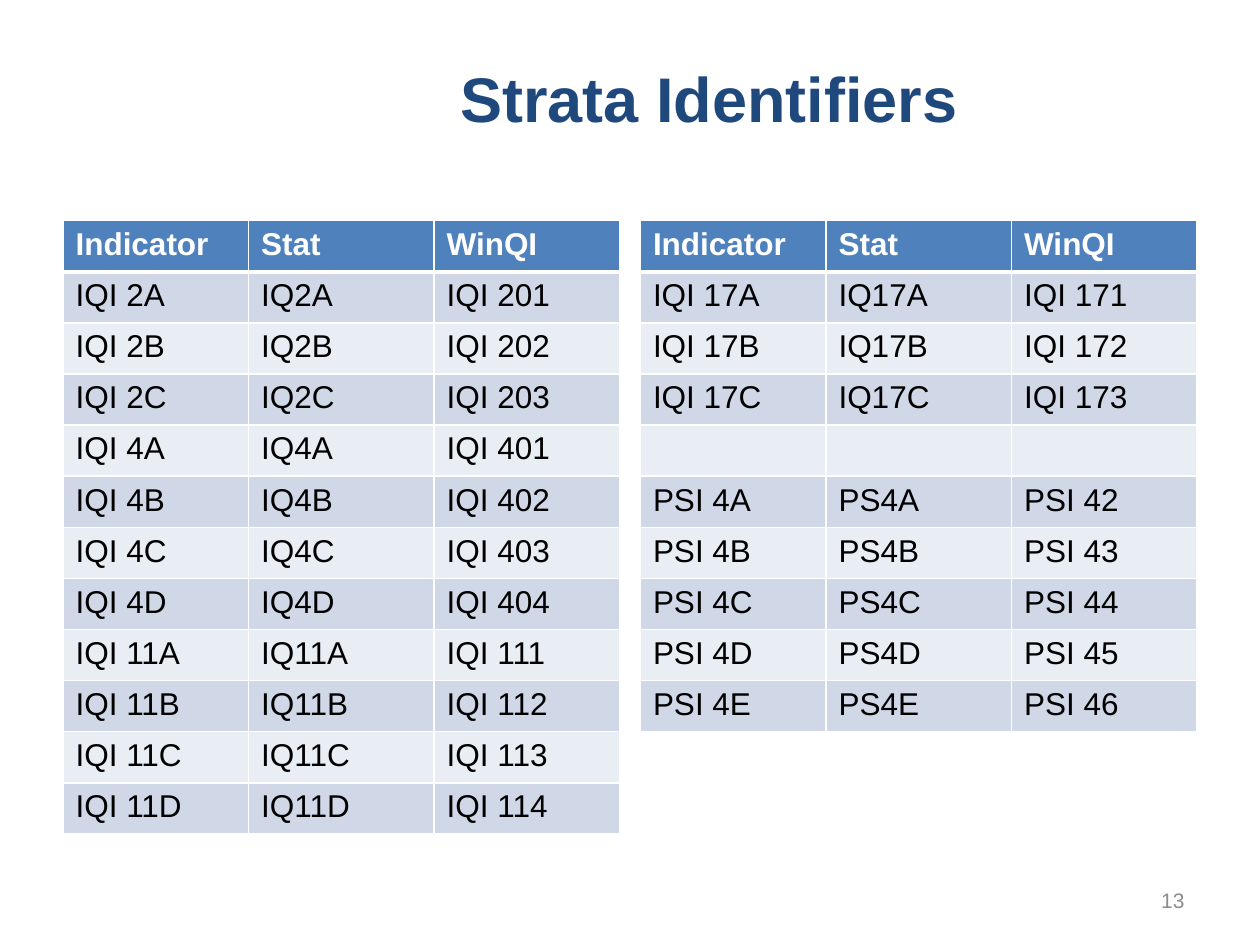
from lxml.etree import SubElement
from pptx import Presentation
from pptx.dml.color import RGBColor
from pptx.enum.text import MSO_ANCHOR as Anchor, PP_ALIGN as Align
from pptx.oxml.ns import qn
from pptx.util import Cm, Pt

NAVY = RGBColor(0x1F, 0x49, 0x7D)
BLUE = RGBColor(0x4F, 0x81, 0xBD)
BAND_DARK = RGBColor(0xD0, 0xD8, 0xE8)
BAND_LIGHT = RGBColor(0xE9, 0xED, 0xF4)
WHITE = RGBColor(0xFF, 0xFF, 0xFF)
BLACK = RGBColor(0x00, 0x00, 0x00)
GRAY = RGBColor(0x8C, 0x8C, 0x8C)


def write(frame, text, size=18, color=BLACK, bold=False, align=Align.LEFT):
    para = frame.paragraphs[0]
    para.alignment = align
    span = para.add_run()
    span.text = text
    span.font.name = "Arial"
    span.font.size = Pt(size)
    span.font.bold = bold
    span.font.color.rgb = color


def set_border(cell, side, width):
    line = SubElement(cell._tc.get_or_add_tcPr(), qn(f"a:{side}"), w=str(Pt(width)))
    fill = SubElement(line, qn("a:solidFill"))
    SubElement(fill, qn("a:srgbClr"), val=str(WHITE))


deck = Presentation()
deck.slide_width = Cm(25.4)
deck.slide_height = Cm(19.05)
page = deck.slides.add_slide(deck.slide_layouts[6])

labels = [
    ("Strata Identifiers", (4.45, 0.76, 19.69, 2.41),
     dict(size=36, color=NAVY, bold=True, align=Align.CENTER)),
    ("13", (18.2, 17.65, 5.93, 1.01),
     dict(size=12, color=GRAY, align=Align.RIGHT)),
]
for text, place, style in labels:
    box = page.shapes.add_textbox(*map(Cm, place))
    box.text_frame.word_wrap = True
    box.text_frame.vertical_anchor = Anchor.MIDDLE
    write(box.text_frame, text, **style)

HEADINGS = ("Indicator", "Stat", "WinQI")
COLUMN_WIDTH = 3.74
ROW_HEIGHT = 1.03
TABLE_TOP = 4.45
tables = [
    (1.27, [("IQI", 2, "ABC", 201), ("IQI", 4, "ABCD", 401), ("IQI", 11, "ABCD", 111)]),
    (12.91, [("IQI", 17, "ABC", 171), None, ("PSI", 4, "ABCDE", 42)]),
]

for left, groups in tables:
    rows = [HEADINGS]
    for group in groups:
        if group is None:
            rows.append(("", "", ""))
            continue
        family, number, letters, first_code = group
        for code, letter in enumerate(letters, first_code):
            rows.append((f"{family} {number}{letter}",
                         f"{family[:2]}{number}{letter}",
                         f"{family} {code}"))

    table = page.shapes.add_table(
        len(rows), len(HEADINGS), Cm(left), Cm(TABLE_TOP),
        Cm(COLUMN_WIDTH * len(HEADINGS)), Cm(ROW_HEIGHT * len(rows))).table
    for column in table.columns:
        column.width = Cm(COLUMN_WIDTH)
    for index, values in enumerate(rows):
        table.rows[index].height = Cm(ROW_HEIGHT)
        header = index == 0
        band = BLUE if header else BAND_DARK if index % 2 else BAND_LIGHT
        for position, text in enumerate(values):
            cell = table.cell(index, position)
            set_border(cell, "lnL", 1)
            set_border(cell, "lnR", 1)
            set_border(cell, "lnT", 3 if index == 1 else 1)
            set_border(cell, "lnB", 3 if header else 1)
            cell.fill.solid()
            cell.fill.fore_color.rgb = band
            if text:
                write(cell.text_frame, text, bold=header,
                      color=WHITE if header else BLACK)

deck.save("out.pptx")
